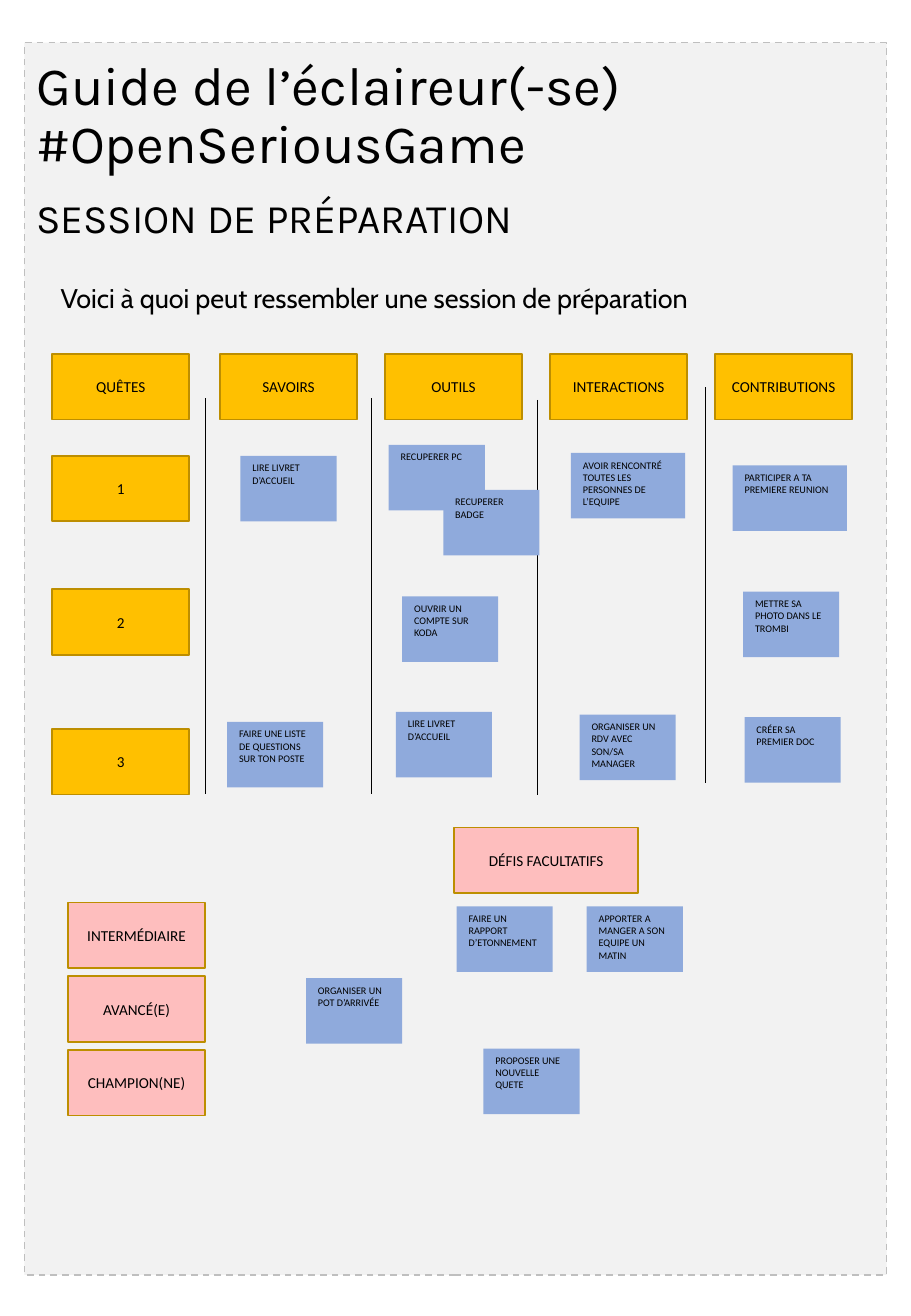
"""Build the preparation session board of the scout's guide."""
import dataclasses

import lxml.etree
import pptx
import pptx.dml.color
import pptx.enum.dml
import pptx.enum.shapes
import pptx.enum.text
import pptx.oxml.ns
import pptx.util

Cm = pptx.util.Cm
Pt = pptx.util.Pt
MIDDLE = pptx.enum.text.MSO_ANCHOR.MIDDLE
TOP = pptx.enum.text.MSO_ANCHOR.TOP
CENTER = pptx.enum.text.PP_ALIGN.CENTER
LEFT = pptx.enum.text.PP_ALIGN.LEFT


@dataclasses.dataclass(frozen=True)
class Theme:
    """Colours, fonts and type sizes of the board."""
    text: str = "000000"
    panel: str = "F2F2F2"
    panel_edge: str = "BFBFBF"
    quest: str = "FFC000"
    challenge: str = "FEBEBE"
    card_edge: str = "BD8E00"
    note: str = "8FAADC"
    heading_font: str = "Karla"
    intro_font: str = "Cabin"
    card_font: str = "Calibri"
    title_size: float = 32
    subtitle_size: float = 24
    intro_size: float = 16
    card_size: float = 9
    note_size: float = 6


THEME = Theme()
CARD_WIDTH, NOTE_WIDTH, WIDE_NOTE_WIDTH, BOX_HEIGHT = 2.87, 2.01, 2.39, 1.37
QUEST_LEFT, HEADER_TOP = 1.09, 7.4
COLUMN_LEFT, COLUMN_STEP = 4.6, 3.45
LEVEL_LEFT, LEVEL_TOP, LEVEL_STEP = 1.42, 18.87, 1.54
DIVIDER_LENGTH = 8.26

COLUMNS = ["SAVOIRS", "OUTILS", "INTERACTIONS", "CONTRIBUTIONS"]
QUESTS = [("QUÊTES", HEADER_TOP), ("1", 9.53), ("2", 12.32), ("3", 15.24)]
LEVELS = ["INTERMÉDIAIRE", "AVANCÉ(E)", "CHAMPION(NE)"]
DIVIDERS = [(4.29, 8.33), (7.77, 8.33), (11.23, 8.36), (14.76, 8.1)]
NOTES = [
    ("LIRE LIVRET D’ACCUEIL", 5.03, 9.53),
    ("FAIRE UNE LISTE DE QUESTIONS SUR TON POSTE", 4.75, 15.09),
    ("RECUPERER PC", 8.13, 9.3),
    ("RECUPERER BADGE", 9.27, 10.24),
    ("OUVRIR UN COMPTE SUR KODA", 8.41, 12.47),
    ("LIRE LIVRET D’ACCUEIL", 8.28, 14.88),
    ("ORGANISER UN RDV AVEC SON/SA MANAGER", 12.12, 14.94),
    ("METTRE SA PHOTO DANS LE TROMBI", 15.54, 12.37),
    ("CRÉER SA PREMIER DOC", 15.57, 14.99),
    ("FAIRE UN RAPPORT D’ETONNEMENT", 9.55, 18.95),
    ("APPORTER A MANGER A SON EQUIPE UN MATIN", 12.27, 18.95),
    ("ORGANISER UN POT D’ARRIVÉE", 6.4, 20.45),
    ("PROPOSER UNE NOUVELLE QUETE", 10.11, 21.92),
]
WIDE_NOTES = [
    ("AVOIR RENCONTRÉ TOUTES LES PERSONNES DE L’EQUIPE", 11.94, 9.47),
    ("PARTICIPER A TA PREMIERE REUNION", 15.32, 9.73),
]


def colour(value):
    """Turn a hex string into a colour."""
    return pptx.dml.color.RGBColor.from_string(value)


def write(box, text, font, size, anchor=TOP, align=LEFT):
    """Put one styled paragraph into a box and return it."""
    frame = box.text_frame
    frame.word_wrap = True
    frame.vertical_anchor = anchor
    frame.text = text
    para = frame.paragraphs[0]
    para.alignment = align
    for span in para.runs:
        span.font.name = font
        span.font.size = Pt(size)
        span.font.color.rgb = colour(THEME.text)
    return para


def add_rectangle(page, left, top, width, height, fill, edge=None):
    """Add a flat rectangle, with an outline if an edge colour is given."""
    box = page.shapes.add_shape(pptx.enum.shapes.MSO_SHAPE.RECTANGLE,
                                Cm(left), Cm(top), Cm(width), Cm(height))
    box.shadow.inherit = False
    box.fill.solid()
    box.fill.fore_color.rgb = colour(fill)
    if edge:
        box.line.color.rgb = colour(edge)
        box.line.width = Pt(1)
    else:
        box.line.fill.background()
    return box


def add_panel(page):
    """Add the grey page panel with its dashed outline."""
    box = add_rectangle(page, 0.51, 0.89, 18.03, 25.76, THEME.panel, THEME.panel_edge)
    box.line.dash_style = pptx.enum.dml.MSO_LINE.DASH


def add_heading(page, text, area, font, size, space_before, anchor=MIDDLE):
    """Add a line of heading text and return its box."""
    box = page.shapes.add_textbox(*[Cm(length) for length in area])
    para = write(box, text, font, size, anchor)
    para.line_spacing = 0.9
    para.space_before = Pt(space_before)
    return box


def add_intro(page):
    """Add the introductory sentence with narrow margins."""
    box = add_heading(page, "Voici à quoi peut ressembler une session de préparation",
                      (1.09, 5.89, 16.46, 1.83), THEME.intro_font, THEME.intro_size, 10, TOP)
    frame = box.text_frame
    frame.margin_left = frame.margin_right = Cm(0.18)
    frame.margin_top = frame.margin_bottom = Cm(0.08)


def add_divider(page, left, top):
    """Add a thin vertical line between two columns."""
    line = page.shapes.add_connector(pptx.enum.shapes.MSO_CONNECTOR.STRAIGHT, Cm(left), Cm(top),
                                     Cm(left), Cm(top + DIVIDER_LENGTH))
    line.line.color.rgb = colour(THEME.text)
    line.line.width = Pt(0.5)
    lxml.etree.SubElement(line._element.spPr, pptx.oxml.ns.qn("a:effectLst"))


def add_card(page, text, left, top, fill, width=CARD_WIDTH):
    """Add an outlined card with a centred label."""
    box = add_rectangle(page, left, top, width, BOX_HEIGHT, fill, THEME.card_edge)
    write(box, text, THEME.card_font, THEME.card_size, MIDDLE, CENTER)


def add_note(page, text, left, top, width=NOTE_WIDTH):
    """Add a blue sticky note."""
    box = add_rectangle(page, left, top, width, BOX_HEIGHT, THEME.note)
    write(box, text, THEME.card_font, THEME.note_size)


def main():
    """Build the board and save the deck."""
    deck = pptx.Presentation()
    deck.slide_width, deck.slide_height = Cm(19.05), Cm(27.51)
    page = deck.slides.add_slide(deck.slide_layouts[6])

    add_panel(page)
    add_heading(page, "Guide de l’éclaireur(-se) #OpenSeriousGame",
                (0.51, 0.94, 18.03, 3.02), THEME.heading_font, THEME.title_size, 7.5)
    add_heading(page, "SESSION DE PRÉPARATION",
                (0.51, 3.89, 17.75, 1.45), THEME.heading_font, THEME.subtitle_size, 7.5)
    add_intro(page)

    for left, top in DIVIDERS:
        add_divider(page, left, top)
    for index, label in enumerate(COLUMNS):
        add_card(page, label, COLUMN_LEFT + index * COLUMN_STEP, HEADER_TOP, THEME.quest)
    for label, top in QUESTS:
        add_card(page, label, QUEST_LEFT, top, THEME.quest)
    add_card(page, "DÉFIS FACULTATIFS", 9.5, 17.3, THEME.challenge, 3.84)
    for index, label in enumerate(LEVELS):
        add_card(page, label, LEVEL_LEFT, LEVEL_TOP + index * LEVEL_STEP, THEME.challenge)
    for text, left, top in NOTES:
        add_note(page, text, left, top)
    for text, left, top in WIDE_NOTES:
        add_note(page, text, left, top, WIDE_NOTE_WIDTH)

    deck.save("out.pptx")


if __name__ == "__main__":
    main()
